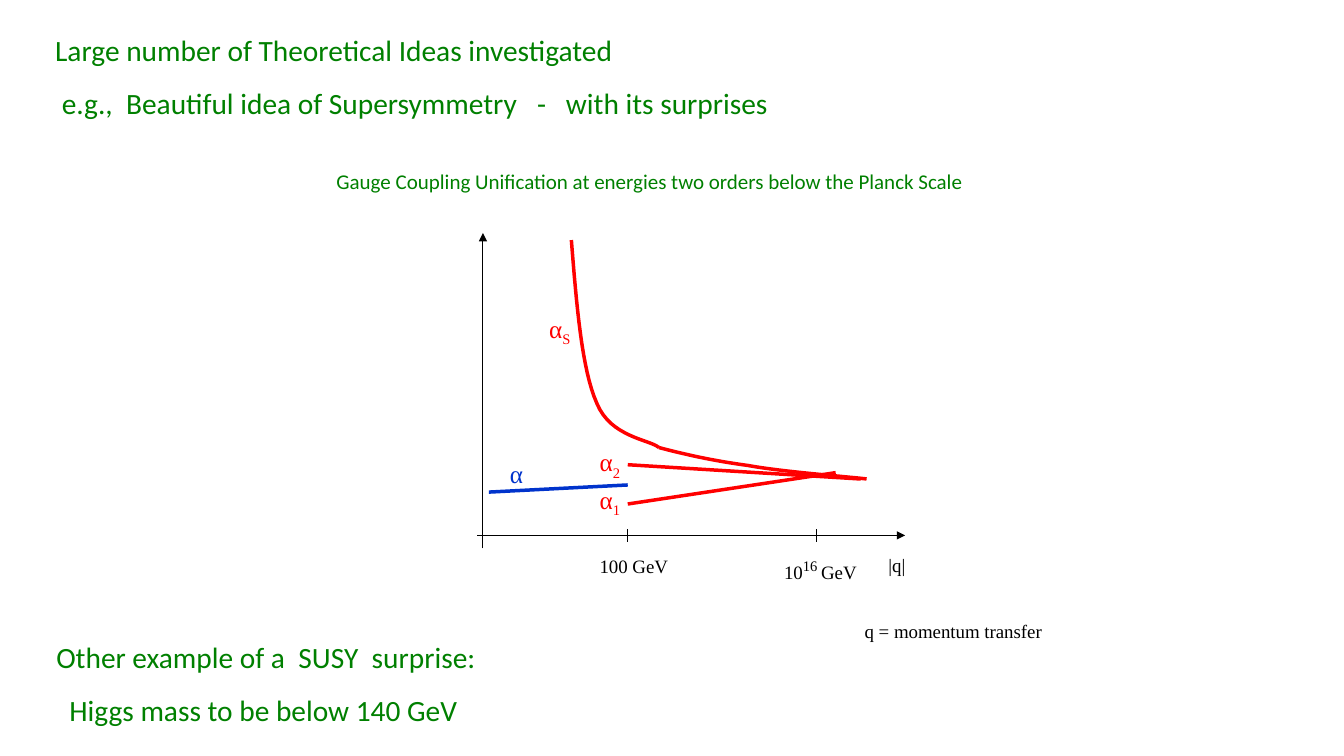
from lxml import etree
from pptx import Presentation, util as u
from pptx.dml.color import RGBColor
from pptx.enum import shapes as sh, text as tx
from pptx.oxml.ns import qn

RED, BLUE, GREEN, BLACK = "FF0000", "0033CC", "008000", "000000"
SERIF, SANS = "Times New Roman", "Calibri"


def paint(part, color):
    part.rgb = RGBColor.from_string(color)


def draw(start, end, color, width, arrow=False):
    ends = [u.Cm(v) for v in (*start, *end)]
    line = slide.shapes.add_connector(sh.MSO_CONNECTOR.STRAIGHT, *ends)
    paint(line.line.color, color)
    line.line.width = u.Pt(width)
    props = line._element.spPr
    if arrow:
        etree.SubElement(props.find(qn("a:ln")), qn("a:tailEnd"), type="triangle")
    etree.SubElement(props, qn("a:effectLst"))


prs = Presentation()
prs.slide_width, prs.slide_height = u.Cm(33.87), u.Cm(19.05)
slide = prs.slides.add_slide(prs.slide_layouts[6])

curves = [
    [(14.4, 6.05), (14.53, 7.67), (14.66, 9.3), (15.04, 10.16),
     (15.39, 11.02), (16.36, 11.07), (16.61, 11.28)],
    [(16.61, 11.28), (17.3, 11.46), (17.96, 11.61), (18.85, 11.73),
     (19.71, 11.89), (21.34, 12.01), (21.84, 12.07)],
]
steps = 16
for knots in curves:
    points = []
    for first in (0, 3):
        a, b, c, d = knots[first:first + 4]
        for step in range(1, steps + 1):
            t = step / steps
            s = 1 - t
            points.append([
                u.Cm(s**3 * a[i] + 3 * s * s * t * b[i] + 3 * s * t * t * c[i] + t**3 * d[i])
                for i in (0, 1)
            ])
    x, y = knots[0]
    pen = slide.shapes.build_freeform(u.Cm(x), u.Cm(y))
    pen.add_line_segments(points, close=False)
    curve = pen.convert_to_shape()
    curve.fill.background()
    paint(curve.line.color, RED)
    curve.line.width = u.Pt(2.5)
    curve.shadow.inherit = False

base, weak, grand = 13.49, 15.82, 20.57
draw((12.17, 13.82), (12.17, 5.87), BLACK, 0.75, True)
draw((12.8, base), (22.81, base), BLACK, 0.75, True)
draw((12.95, base), (12.01, base), BLACK, 1)
for x in (weak, grand):
    draw((x, 13.34), (x, 13.67), BLACK, 0.75)
draw((weak, 12.7), (21.06, 11.91), RED, 2.5)
draw((weak, 11.71), (21.69, 12.07), RED, 2.5)
draw((12.32, 12.4), (weak, 12.22), BLUE, 2.5)

# Each paragraph is (indent, space before, runs); each run is (text, size, baseline, spacing).
SUB, SUP = -25000, 30000
two, three = (" ", 21, 0, 475), (" ", 21, 0, 950)
notes = [
    ((11.4 + 1.2, 11.43, 1, 1.02), SERIF, BLUE, 1, [(0, 0, [("α", 18), (" ", 15)])]),
    ((14.86, 13.84, 2.26, 0.84), SERIF, BLACK, 1, [(0, 0, [("100 GeV", 13.5)])]),
    ((19.51, 13.84, 2.44, 0.84), SERIF, BLACK, 1,
     [(0, 0, [("10", 13.5), ("16 ", 18, SUP), ("GeV", 13.5)])]),
    ((21.54, 13.82, 5.05, 2.57), SERIF, BLACK, 1,
     [(0.6, 0, [("|q|", 13.5)]), (0, 31, [("q = momentum transfer", 13.5)])]),
    ((1.14, 0.25, 18.67, 2.95), SANS, GREEN, 1.5,
     [(0, 0, [("Large number of Theoretical Ideas investigated", 21)]),
      (0.17, 0, [("e.g.,", 21), two, ("Beautiful idea of Supersymmetry", 21), three,
                 ("-", 21), three, ("with its surprises", 21)])]),
    ((8.23, 4.11, 16.59, 0.89), SANS, GREEN, 1,
     [(0, 0, [("Gauge Coupling Unification at energies two orders below the Planck Scale", 15)])]),
    ((1.17, 15.54, 11.18, 2.95), SANS, GREEN, 1.5,
     [(0, 0, [("Other example of a", 21), two, ("SUSY", 21), two, ("surprise:", 21)]),
      (0.33, 0, [("Higgs mass to be below 140 GeV", 21)])]),
]
for mark, x, y in (("2", 14.86, 11.13), ("1", 14.86, 12.07), ("S", 13.59, 7.77)):
    notes.append(((x, y, 1.2, 1.02), SERIF, RED, 1,
                  [(0, 0, [("α", 18), (mark, 18, SUB), (" ", 15)])]))

for place, face, color, lead, paras in notes:
    frame = slide.shapes.add_textbox(*[u.Cm(v) for v in place]).text_frame
    frame.word_wrap = False
    frame.auto_size = tx.MSO_AUTO_SIZE.SHAPE_TO_FIT_TEXT
    for i, (left, gap, runs) in enumerate(paras):
        para = frame.add_paragraph() if i else frame.paragraphs[0]
        para.line_spacing = lead
        if left:
            para._p.get_or_add_pPr().set("marL", str(u.Cm(left)))
        if gap:
            para.space_before = u.Pt(gap)
        for words, size, *extra in runs:
            run = para.add_run()
            run.text = words
            run.font.size = u.Pt(size)
            run.font.name = face
            paint(run.font.color, color)
            for key, value in zip(("baseline", "spc"), extra):
                run._r.get_or_add_rPr().set(key, str(value))

prs.save("out.pptx")
